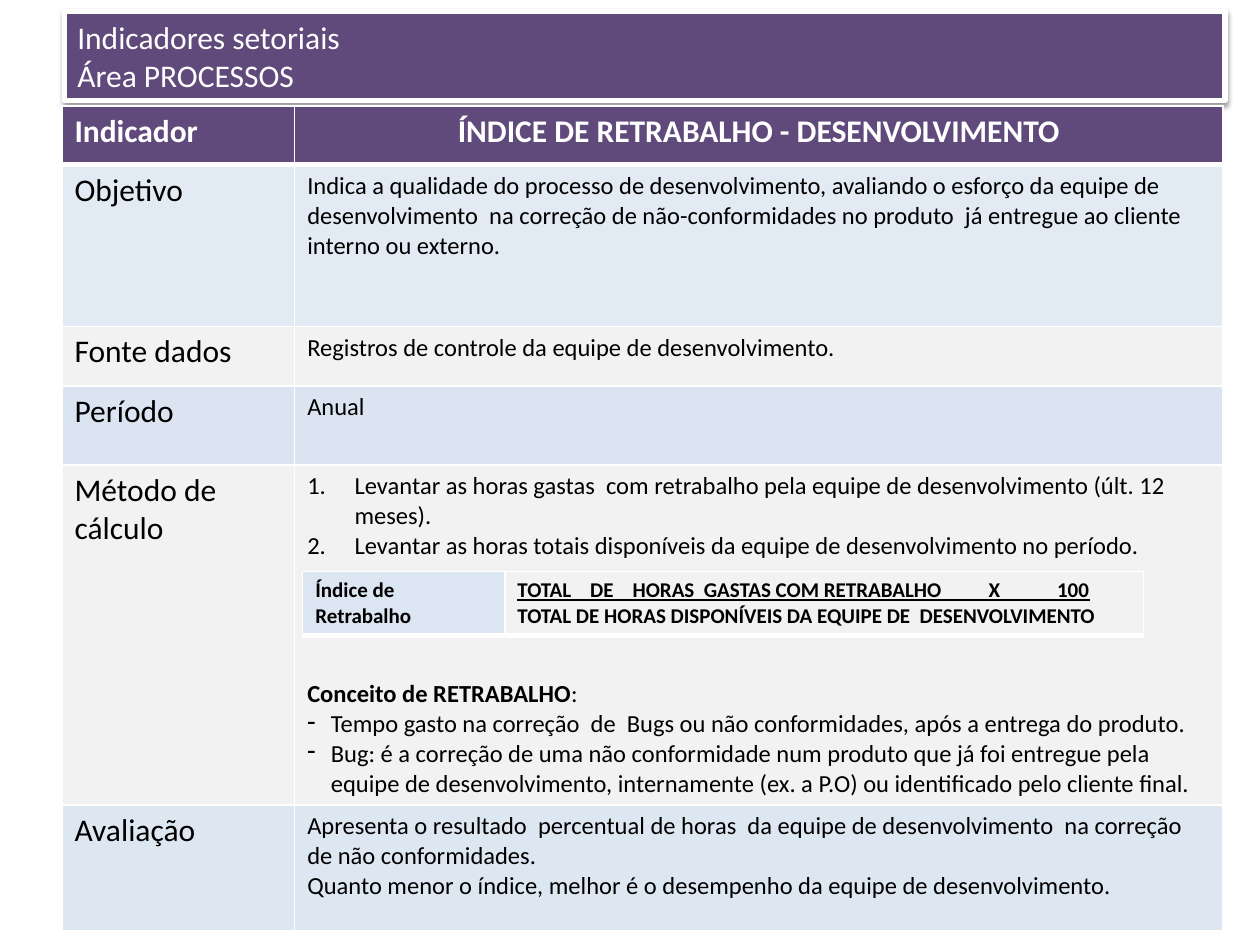
from lxml import etree
from pptx import Presentation
from pptx.dml.color import RGBColor
from pptx.enum import text
from pptx.oxml import ns
from pptx.util import Pt

FONT = "Calibri"
PURPLE, WHITE, BLACK = "604A7B", "FFFFFF", "000000"
BLUE, GREY, PALE = "B9CDE5", "F2F2F2", "DCE6F2"

TITLE = ["Indicadores setoriais", "Área PROCESSOS"]
HEADER = ("Indicador", "ÍNDICE DE RETRABALHO - DESENVOLVIMENTO")
# label, paragraphs (kind, text), fill, fill opacity in percent, row height
ROWS = [
    ("Objetivo", [
        ("plain", "Indica a qualidade do processo de desenvolvimento, avaliando o esforço da "
                  "equipe de desenvolvimento  na correção de não-conformidades no produto  já "
                  "entregue ao cliente interno ou externo."),
    ], BLUE, 41, 92.5),
    ("Fonte dados", [
        ("plain", "Registros de controle da equipe de desenvolvimento."),
    ], GREY, 100, 34),
    ("Período", [("plain", "Anual")], BLUE, 51, 45),
    ("Método de cálculo", [
        ("number", "Levantar as horas gastas  com retrabalho pela equipe de desenvolvimento "
                   "(últ. 12 meses)."),
        ("number", "Levantar as horas totais disponíveis da equipe de desenvolvimento no período."),
        ("concept", "Conceito de RETRABALHO:"),
        ("dash", "Tempo gasto na correção  de  Bugs ou não conformidades, após a entrega do "
                 "produto."),
        ("dash", "Bug: é a correção de uma não conformidade num produto que já foi entregue pela "
                 "equipe de desenvolvimento, internamente (ex. a P.O) ou identificado pelo "
                 "cliente final."),
    ], GREY, 100, 194.5),
    ("Avaliação", [
        ("plain", "Apresenta o resultado  percentual de horas  da equipe de desenvolvimento  na "
                  "correção de não conformidades."),
        ("plain", "Quanto menor o índice, melhor é o desempenho da equipe de desenvolvimento."),
    ], BLUE, 48, 72),
]
FORMULA_LABEL = "Índice de Retrabalho"
NUMERATOR = "TOTAL    DE    HORAS  GASTAS COM RETRABALHO          X            100"
DENOMINATOR = "TOTAL DE HORAS DISPONÍVEIS DA EQUIPE DE  DESENVOLVIMENTO"

HEADER_HEIGHT = 33.7
FORMULA_GAP = 68  # room left for the formula above the concept
BULLETS = {  # tag, attributes, hanging indent
    "number": ("a:buAutoNum", {"type": "arabicPeriod"}, 27),
    "dash": ("a:buChar", {"char": "-"}, 13.5),
}


def rgb(color):
    return RGBColor.from_string(color)


def child(parent, tag, **attributes):
    return etree.SubElement(parent, ns.qn(tag), attributes)


def style(run, size, color=BLACK, bold=False):
    run.font.name, run.font.size, run.font.bold = FONT, Pt(size), bold
    run.font.color.rgb = rgb(color)


def write(frame, lines, size, color=BLACK, bold=False):
    frame.text = "\n".join(lines)
    for paragraph in frame.paragraphs:
        for run in paragraph.runs:
            style(run, size, color, bold)


def fill_cell(cell, color, opacity=100):
    cell.fill.solid()
    cell.fill.fore_color.rgb = rgb(color)
    if opacity < 100:
        srgb = cell._tc.tcPr.find(".//" + ns.qn("a:srgbClr"))
        child(srgb, "a:alpha", val=str(opacity * 1000))


def border_cell(cell, top=1, bottom=1):
    properties = cell._tc.get_or_add_tcPr()
    for index, (side, width) in enumerate(
            [("L", 1), ("R", 1), ("T", top), ("B", bottom)]):
        line = etree.Element(ns.qn("a:ln" + side), w=str(Pt(width)))
        child(child(line, "a:solidFill"), "a:srgbClr", val=WHITE)
        properties.insert(index, line)


def add_grid(slide, left, top, widths, heights):
    table = slide.shapes.add_table(len(heights), len(widths), Pt(left), Pt(top),
                                   Pt(sum(widths)), Pt(sum(heights))).table
    for column, width in zip(table.columns, widths):
        column.width = Pt(width)
    for row, height in zip(table.rows, heights):
        row.height = Pt(height)
    return table


def shape_paragraph(paragraph, kind):
    """Apply the list marker or the gap and bold term that the kind asks for."""
    if kind in BULLETS:
        tag, attributes, indent = BULLETS[kind]
        properties = paragraph._p.get_or_add_pPr()
        properties.set("marL", str(Pt(indent)))
        properties.set("indent", str(-Pt(indent)))
        child(properties, tag, **attributes)
    elif kind == "concept":
        paragraph.space_before = Pt(FORMULA_GAP)
        term = paragraph.runs[0]
        term.text = term.text.rstrip(":")
        term.font.bold = True
        colon = paragraph.add_run()
        colon.text = ":"
        style(colon, 14)


def add_title(slide):
    title = slide.shapes.title
    title.left, title.top, title.width, title.height = Pt(37), Pt(6.5), Pt(663), Pt(51)
    title.fill.solid()
    title.fill.fore_color.rgb = rgb(PURPLE)
    title.line.color.rgb = rgb(WHITE)
    title.line.width = Pt(3)
    shadow = child(child(title._element.spPr, "a:effectLst"), "a:outerShdw",
                   blurRad=str(Pt(3.1)), dist=str(Pt(1.6)), dir="5400000", rotWithShape="0")
    child(child(shadow, "a:srgbClr", val=BLACK), "a:alpha", val="38000")
    write(title.text_frame, TITLE, 18, WHITE)
    title.text_frame.auto_size = text.MSO_AUTO_SIZE.NONE
    title.text_frame.vertical_anchor = text.MSO_ANCHOR.MIDDLE
    for paragraph in title.text_frame.paragraphs:
        paragraph.alignment = text.PP_ALIGN.LEFT


def add_indicator(slide):
    heights = [HEADER_HEIGHT] + [row[-1] for row in ROWS]
    table = add_grid(slide, 35.4, 60.5, [133, 530.5], heights)
    for column, heading in enumerate(HEADER):
        cell = table.cell(0, column)
        write(cell.text_frame, [heading], 18, WHITE, True)
        fill_cell(cell, PURPLE)
        border_cell(cell, bottom=3)
    table.cell(0, 1).text_frame.paragraphs[0].alignment = text.PP_ALIGN.CENTER

    for number, (label, content, color, opacity, _) in enumerate(ROWS, 1):
        name, detail = table.cell(number, 0), table.cell(number, 1)
        write(name.text_frame, [label], 18)
        write(detail.text_frame, [line for _, line in content], 14)
        for paragraph, (kind, _) in zip(detail.text_frame.paragraphs, content):
            shape_paragraph(paragraph, kind)
        for cell in (name, detail):
            fill_cell(cell, color, opacity)
            border_cell(cell, top=3 if number == 1 else 1)


def add_formula(slide):
    table = add_grid(slide, 173, 326.5, [115.5, 365], [36])
    label, fraction = table.cell(0, 0), table.cell(0, 1)
    write(label.text_frame, [FORMULA_LABEL], 12, bold=True)
    write(fraction.text_frame, [NUMERATOR, DENOMINATOR], 12, bold=True)
    fraction.text_frame.paragraphs[0].runs[0].font.underline = True
    fill_cell(label, PALE)
    fraction.fill.background()
    for cell in (label, fraction):
        border_cell(cell, bottom=3)


def main():
    deck = Presentation()
    deck.slide_width, deck.slide_height = Pt(720), Pt(540)
    slide = deck.slides.add_slide(deck.slide_layouts[5])
    add_title(slide)
    add_indicator(slide)
    add_formula(slide)
    deck.save("out.pptx")


if __name__ == "__main__":
    main()
